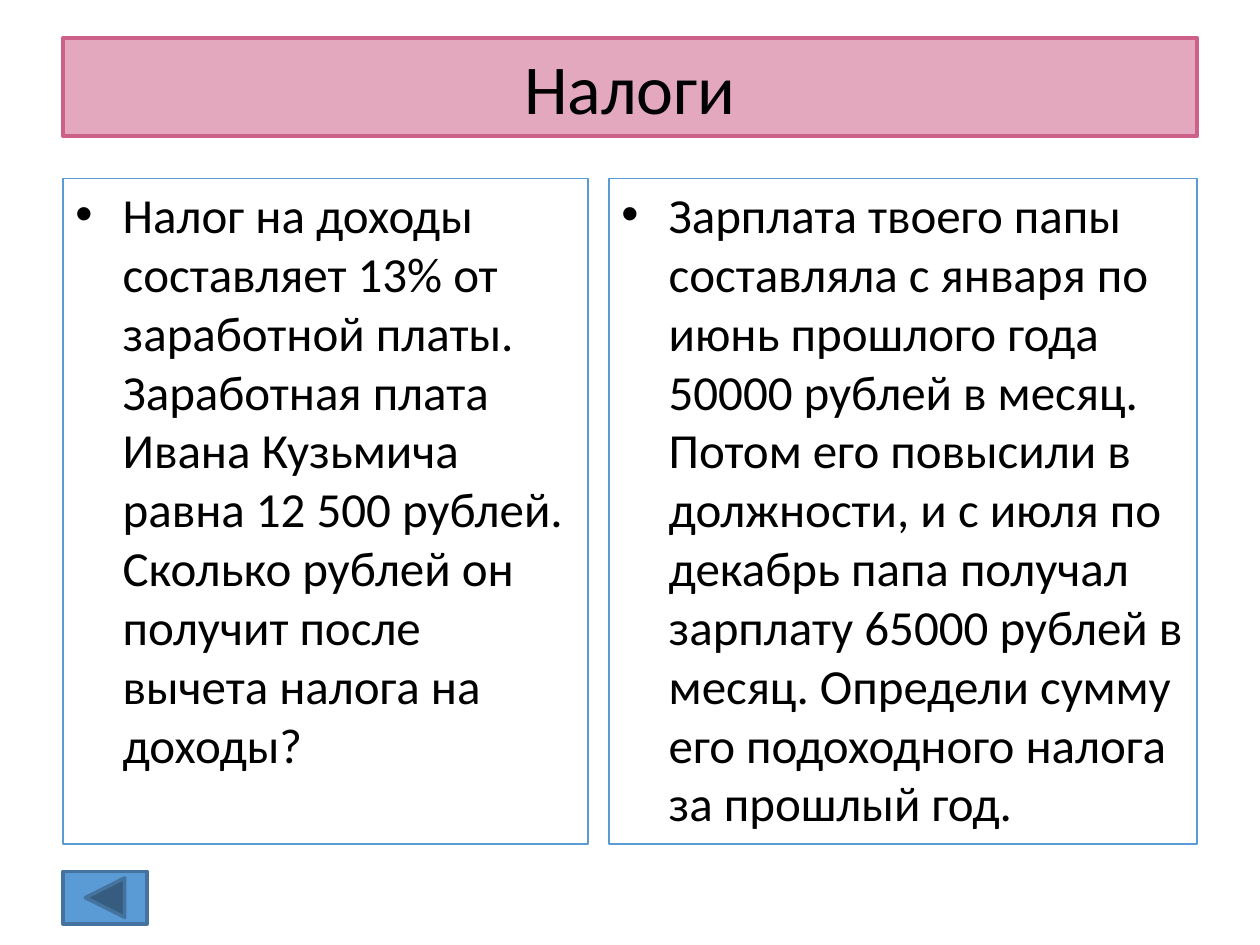
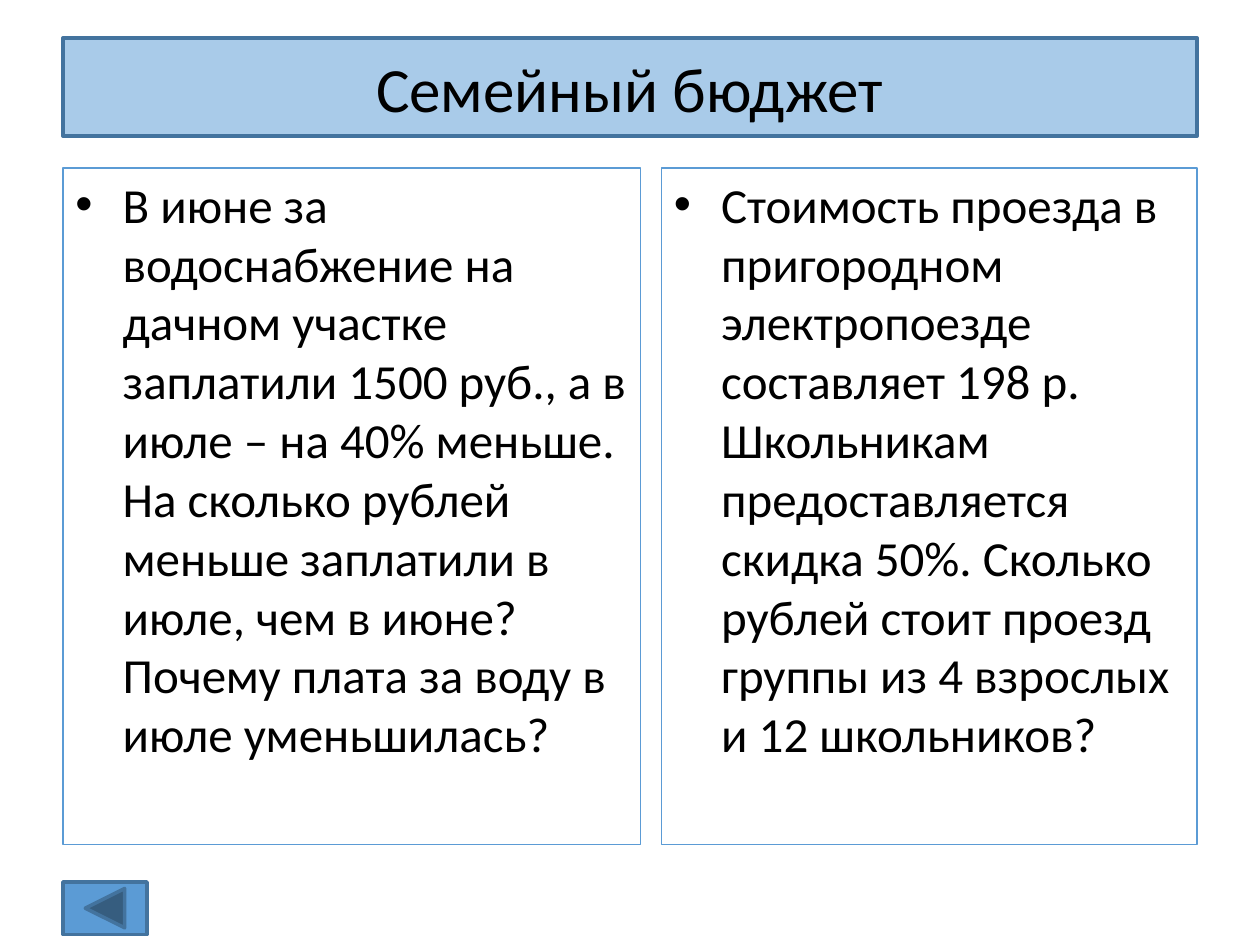
import pptx
import pptx.dml.color
import pptx.enum.shapes
import pptx.enum.text
import pptx.oxml.ns
import pptx.util
from lxml import etree

Pt = pptx.util.Pt
RGB = pptx.dml.color.RGBColor
SHAPE = pptx.enum.shapes.MSO_SHAPE
ANCHOR = pptx.enum.text.MSO_ANCHOR
ALIGN = pptx.enum.text.PP_ALIGN

BLACK = RGB(0x00, 0x00, 0x00)
BLUE = RGB(0x5B, 0x9B, 0xD5)
DARK_BLUE = RGB(0x43, 0x73, 0x9E)
PALE_BLUE = RGB(0xA9, 0xCB, 0xE9)
PINK = RGB(0xE3, 0xA7, 0xBE)
DARK_PINK = RGB(0xCC, 0x60, 0x89)

LEFT, RIGHT = 36, 684
COLUMN_GAP = 12
COLUMN_BOTTOM = 482.4
HANGING = 27

TOPICS = [
    {
        "title": "Налоги", "title_size": 40, "band": PINK, "border": DARK_PINK,
        "top": 102, "first_width": 300, "back_top": 498,
        "problems": [
            "Налог на доходы составляет 13% от заработной платы. Заработная плата "
            "Ивана Кузьмича равна 12 500 рублей. Сколько рублей он получит после "
            "вычета налога на доходы?",
            "Зарплата твоего папы составляла с января по июнь прошлого года 50000 "
            "рублей в месяц. Потом его повысили в должности, и с июля по декабрь "
            "папа получал зарплату 65000 рублей в месяц. Определи сумму его "
            "подоходного налога за прошлый год.",
        ],
    },
    {
        "title": "Семейный бюджет", "title_size": 36, "band": PALE_BLUE, "border": DARK_BLUE,
        "top": 96, "first_width": 330, "back_top": 504,
        "problems": [
            "В июне за водоснабжение на дачном участке заплатили 1500 руб., а в "
            "июле – на 40% меньше. На сколько рублей меньше заплатили в июле, чем "
            "в июне? Почему плата за воду в июле уменьшилась?",
            "Стоимость проезда в пригородном электропоезде составляет 198 р. "
            "Школьникам предоставляется скидка 50%. Сколько рублей стоит проезд "
            "группы из 4 взрослых и 12 школьников?",
        ],
    },
]


def set_all(target, values):
    for name, value in values.items():
        setattr(target, name, value)


def add_panel(slide, preset, bounds, border, border_width, fill=None):
    panel = slide.shapes.add_shape(preset, *(Pt(length) for length in bounds))
    panel.shadow.inherit = False
    if fill is None:
        panel.fill.background()
    else:
        panel.fill.solid()
        panel.fill.fore_color.rgb = fill
    panel.line.color.rgb = border
    panel.line.width = Pt(border_width)
    return panel


def write_text(panel, text, size, anchor, align):
    set_all(panel.text_frame, {"word_wrap": True, "vertical_anchor": anchor})
    paragraph = panel.text_frame.paragraphs[0]
    paragraph.alignment = align
    run = paragraph.add_run()
    run.text = text
    set_all(run.font, {"name": "Calibri", "size": Pt(size)})
    run.font.color.rgb = BLACK
    return paragraph


def add_bullet(paragraph):
    properties = paragraph._p.get_or_add_pPr()
    properties.set("marL", str(Pt(HANGING)))
    properties.set("indent", str(-Pt(HANGING)))
    for tag, name, value in (("a:buFont", "typeface", "Arial"), ("a:buChar", "char", "•")):
        etree.SubElement(properties, pptx.oxml.ns.qn(tag)).set(name, value)


def add_title(slide, topic):
    band = add_panel(slide, SHAPE.ROUND_2_DIAG_RECTANGLE, (LEFT, 21.6, RIGHT - LEFT, 56.2),
                     topic["border"], 2, topic["band"])
    band.adjustments[0] = 0
    write_text(band, topic["title"], topic["title_size"], ANCHOR.MIDDLE, ALIGN.CENTER)


def add_problems(slide, topic):
    second_left = LEFT + topic["first_width"] + COLUMN_GAP
    columns = [(LEFT, topic["first_width"]), (second_left, RIGHT - second_left)]
    for (left, width), problem in zip(columns, topic["problems"]):
        bounds = (left, topic["top"], width, COLUMN_BOTTOM - topic["top"])
        column = add_panel(slide, SHAPE.RECTANGLE, bounds, BLUE, 0.75)
        paragraph = write_text(column, problem, 28, ANCHOR.TOP, ALIGN.LEFT)
        paragraph.space_before = Pt(5.6)
        add_bullet(paragraph)


def add_back_button(slide, top):
    add_panel(slide, SHAPE.ACTION_BUTTON_BACK_OR_PREVIOUS, (LEFT, top, 48, 30),
              DARK_BLUE, 2, BLUE)


def main():
    deck = pptx.Presentation()
    set_all(deck, {"slide_width": Pt(720), "slide_height": Pt(540)})
    for topic in TOPICS:
        slide = deck.slides.add_slide(deck.slide_layouts[6])
        add_problems(slide, topic)
        add_title(slide, topic)
        add_back_button(slide, topic["back_top"])
    deck.save("out.pptx")


if __name__ == "__main__":
    main()
